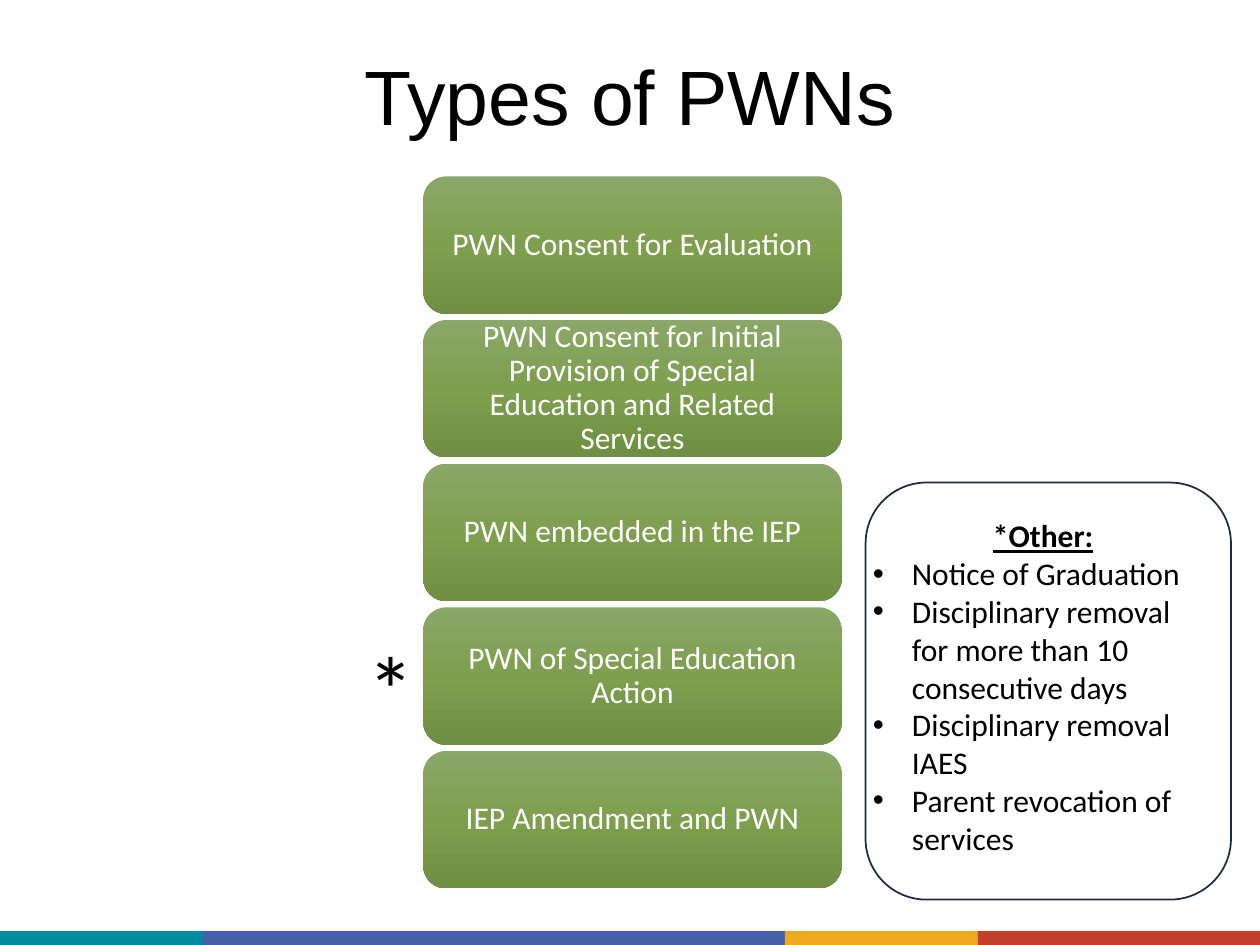
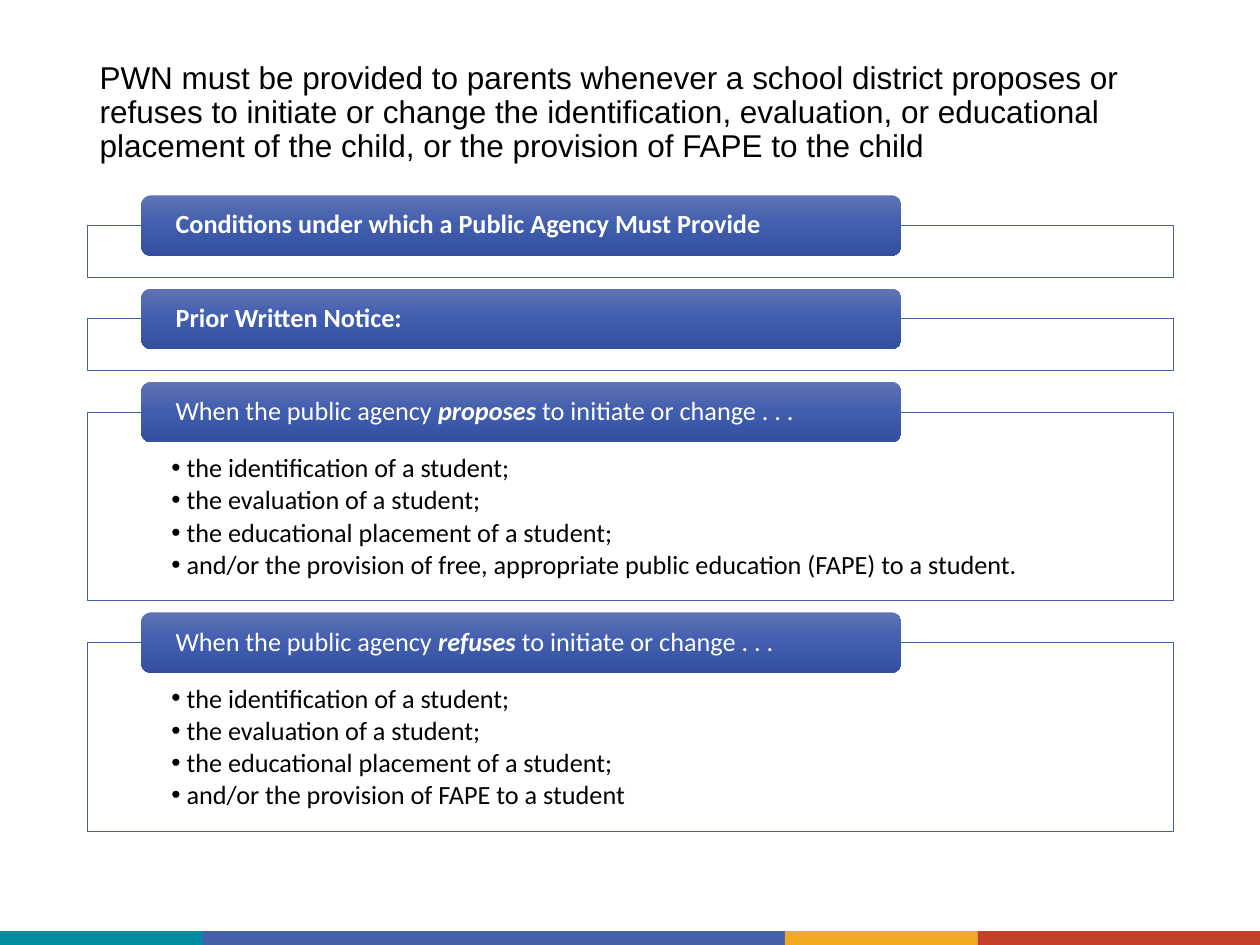
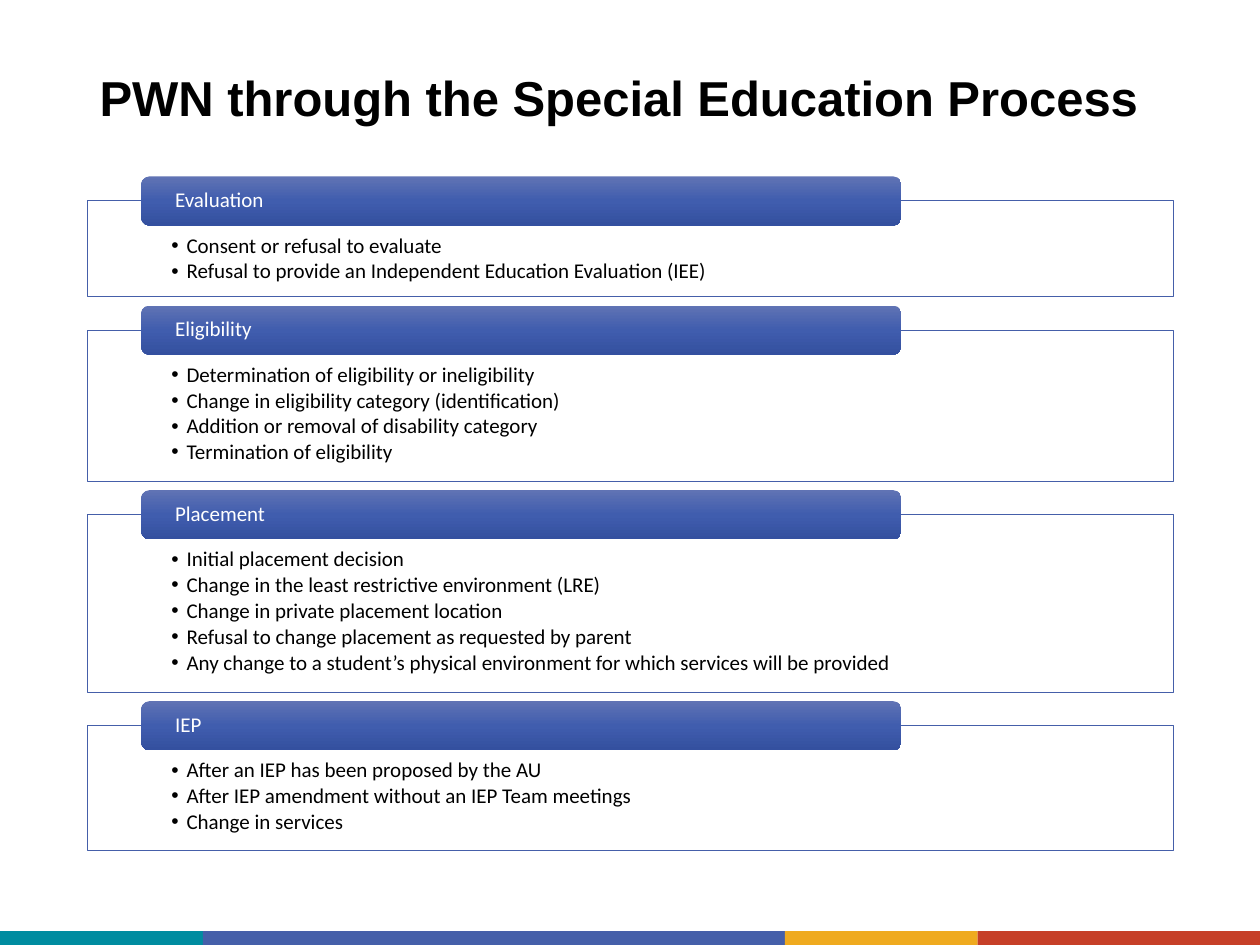
from copy import deepcopy

from pptx import Presentation
from pptx.dml.color import RGBColor
from pptx.enum.shapes import MSO_SHAPE
from pptx.enum.text import MSO_ANCHOR, MSO_AUTO_SIZE, PP_ALIGN
from pptx.oxml.ns import qn
from pptx.util import Inches, Pt

RECT, ROUNDED = MSO_SHAPE.RECTANGLE, MSO_SHAPE.ROUNDED_RECTANGLE
TOP, MIDDLE = MSO_ANCHOR.TOP, MSO_ANCHOR.MIDDLE
LEFT, CENTER = PP_ALIGN.LEFT, PP_ALIGN.CENTER
NO_AUTOFIT = MSO_AUTO_SIZE.NONE

BLACK = RGBColor(0x00, 0x00, 0x00)
WHITE = RGBColor(0xFF, 0xFF, 0xFF)
NAVY = RGBColor(0x1E, 0x2A, 0x4A)
TEAL = RGBColor(0x00, 0x8C, 0xA0)
BLUE = RGBColor(0x45, 0x5F, 0xA9)
AMBER = RGBColor(0xEF, 0xAA, 0x1F)
RED = RGBColor(0xC6, 0x3F, 0x28)
GREENS = [RGBColor(0x8B, 0xA7, 0x69), RGBColor(0x7D, 0x9F, 0x4E), RGBColor(0x6F, 0x90, 0x42)]
BLUES = [RGBColor(0x60, 0x73, 0xB4), RGBColor(0x40, 0x5D, 0xAE), RGBColor(0x34, 0x50, 0x9F)]

TITLE_FONT, BODY_FONT = "Arial", "Calibri"
WIDTH, HEIGHT = 10, 7.5
MARGIN = 0.69
CONTENT_WIDTH = WIDTH - 2 * MARGIN
BAND_TOP = 7.39
BANDS = [(TEAL, 1.61), (BLUE, 4.62), (AMBER, 1.53), (RED, 2.24)]
TEXT_MARGINS = (0.1, 0.05, 0.1, 0.05)

NOTICE_TYPES = [
    "PWN Consent for Evaluation",
    "PWN Consent for Initial Provision of Special Education and Related Services",
    "PWN embedded in the IEP",
    "PWN of Special Education Action",
    "IEP Amendment and PWN",
]
OTHER_NOTICES = [
    [("*Other:", {"bold": True, "underline": True})],
    "Notice of Graduation",
    "Disciplinary removal for more than 10 consecutive days",
    "Disciplinary removal IAES",
    "Parent revocation of services",
]

STRONG = {"bold": True}
STRESSED = {"bold": True, "italic": True}
SHARED_CHANGES = [
    "the identification of a student;",
    "the evaluation of a student;",
    "the educational placement of a student;",
]
CONDITIONS = [
    ([("Conditions under which a Public Agency Must Provide", STRONG)], 0.41, []),
    ([("Prior Written Notice:", STRONG)], 0.41, []),
    (
        ["When the public agency ", ("proposes", STRESSED), " to initiate or change . . ."],
        1.5,
        SHARED_CHANGES
        + ["and/or the provision of free, appropriate public education (FAPE) to a student."],
    ),
    (
        ["When the public agency ", ("refuses", STRESSED), " to initiate or change . . ."],
        1.5,
        SHARED_CHANGES + ["and/or the provision of FAPE to a student"],
    ),
]
PROCESS = [
    ("Evaluation", 0.76, [
        "Consent or refusal to evaluate",
        "Refusal to provide an Independent Education Evaluation (IEE)",
    ]),
    ("Eligibility", 1.2, [
        "Determination of eligibility or ineligibility",
        "Change in eligibility category (identification)",
        "Addition or removal of disability category",
        "Termination of eligibility",
    ]),
    ("Placement", 1.41, [
        "Initial placement decision",
        "Change in the least restrictive environment (LRE)",
        "Change in private placement location",
        "Refusal to change placement as requested by parent",
        "Any change to a student’s physical environment for which services will be provided",
    ]),
    ("IEP", 0.99, [
        "After an IEP has been proposed by the AU",
        "After IEP amendment without an IEP Team meetings",
        "Change in services",
    ]),
]


def add_bullet(para, indent):
    properties = para._p.get_or_add_pPr()
    properties.set("marL", str(Inches(indent)))
    properties.set("indent", str(-Inches(indent)))
    font = properties.makeelement(qn("a:buFont"), {"typeface": "Arial"})
    mark = properties.makeelement(qn("a:buChar"), {"char": "•"})
    properties.extend([font, mark])


def write(box, paragraphs, *, size, color=BLACK, font=BODY_FONT, bold=False, align=LEFT,
          anchor=TOP, margins=TEXT_MARGINS, spacing=0.9, after=0, indent=0, bullets_from=0):
    frame = box.text_frame
    frame.word_wrap = True
    frame.auto_size = NO_AUTOFIT
    frame.vertical_anchor = anchor
    frame.margin_left, frame.margin_top, frame.margin_right, frame.margin_bottom = map(Inches, margins)
    for index, spans in enumerate(paragraphs):
        para = frame.add_paragraph() if index else frame.paragraphs[0]
        bulleted = indent and index >= bullets_from
        if bulleted:
            add_bullet(para, indent)
        para.alignment = LEFT if bulleted else align
        para.line_spacing = spacing
        para.space_after = Pt(after)
        for part in [spans] if isinstance(spans, str) else spans:
            text, style = (part, {}) if isinstance(part, str) else part
            span = para.add_run()
            span.text = text
            span.font.name = font
            span.font.size = Pt(size)
            span.font.color.rgb = color
            span.font.bold = style.get("bold", bold)
            span.font.italic = style.get("italic", False)
            span.font.underline = style.get("underline", False)


def add_box(page, kind, left, top, width, height, *, fill=None, line=None, line_width=1):
    box = page.shapes.add_shape(kind, Inches(left), Inches(top), Inches(width), Inches(height))
    box.shadow.inherit = False
    if fill is None:
        box.fill.background()
    elif isinstance(fill, list):
        box.fill.gradient()
        box.fill.gradient_angle = 270
        stops = box.element.spPr.find(".//" + qn("a:gsLst"))
        stops.insert(1, deepcopy(stops[0]))
        for stop, position, color in zip(box.fill.gradient_stops, (0, 0.5, 1), fill):
            stop.position = position
            stop.color.rgb = color
    else:
        box.fill.solid()
        box.fill.fore_color.rgb = fill
    if line is None:
        box.line.fill.background()
    else:
        box.line.color.rgb = line
        box.line.width = Pt(line_width)
    return box


def add_text(page, paragraphs, left, top, width, height, **style):
    box = page.shapes.add_textbox(Inches(left), Inches(top), Inches(width), Inches(height))
    write(box, paragraphs, **style)


def add_page(deck, title, *, height=0.8, **style):
    page = deck.slides.add_slide(deck.slide_layouts[5])
    box = page.shapes.title
    box.left, box.top = Inches(MARGIN), Inches(0.4)
    box.width, box.height = Inches(CONTENT_WIDTH), Inches(height)
    write(box, [title], font=TITLE_FONT, anchor=MIDDLE, **style)
    return page


def add_bands_to_master(deck, page):
    left = 0
    for index, (color, width) in enumerate(BANDS):
        band = add_box(page, RECT, left, BAND_TOP, width, HEIGHT - BAND_TOP, fill=color)
        band.element.xpath(".//p:cNvPr")[0].set("id", str(20 + index))
        deck.slide_master.shapes.element.append(band.element)
        left += width


def add_notice_stack(page):
    height, gap = 1.09, 0.05
    for row, notice in enumerate(NOTICE_TYPES):
        box = add_box(page, ROUNDED, 3.36, 1.4 + row * (height + gap), 3.32, height, fill=GREENS)
        write(box, [notice], size=18, color=WHITE, align=CENTER, anchor=MIDDLE,
              margins=(0.12, 0.1, 0.12, 0.1))


def add_panels(page, panels, *, top, tab_height, gap, size, inset):
    for heading, height, items in panels:
        middle = top + tab_height / 2
        body = add_box(page, RECT, MARGIN, middle, CONTENT_WIDTH, height,
                       fill=WHITE, line=BLUE, line_width=0.5)
        color = body.element.spPr.find(qn("a:solidFill"))[0]
        color.append(color.makeelement(qn("a:alpha"), {"val": "90000"}))
        if items:
            write(body, items, size=size, margins=(0.67, inset, 0.67, 0.1),
                  after=0.15 * size, indent=0.12)
        tab = add_box(page, ROUNDED, MARGIN + 0.05 * CONTENT_WIDTH, top,
                      0.7 * CONTENT_WIDTH, tab_height, fill=BLUES)
        write(tab, [heading], size=size, color=WHITE, anchor=MIDDLE, margins=(0.25, 0, 0.25, 0))
        top = middle + height + gap


def main():
    deck = Presentation()
    deck.slide_width, deck.slide_height = Inches(WIDTH), Inches(HEIGHT)

    types_page = add_page(deck, "Types of PWNs", size=44, align=CENTER)
    add_bands_to_master(deck, types_page)
    add_notice_stack(types_page)
    add_text(types_page, OTHER_NOTICES, 6.83, 4.05, 2.9, 3.13, size=18, align=CENTER,
             spacing=1, indent=0.31, bullets_from=1)
    add_box(types_page, ROUNDED, 6.87, 3.83, 2.9, 3.31, line=NAVY)
    add_text(types_page, ["*"], 2.82, 4.95, 0.6, 1.01, size=54, spacing=1)

    conditions_page = add_page(
        deck,
        "PWN must be provided to parents whenever a school district proposes or refuses to "
        "initiate or change the identification, evaluation, or educational placement of the "
        "child, or the provision of FAPE to the child",
        height=1, size=18)
    add_panels(conditions_page, CONDITIONS, top=1.55, tab_height=0.48, gap=0.09, size=15, inset=0.34)

    process_page = add_page(deck, "PWN through the Special Education Process", size=28, bold=True)
    add_panels(process_page, PROCESS, top=1.4, tab_height=0.39, gap=0.07, size=12, inset=0.27)

    deck.save("out.pptx")


if __name__ == "__main__":
    main()
